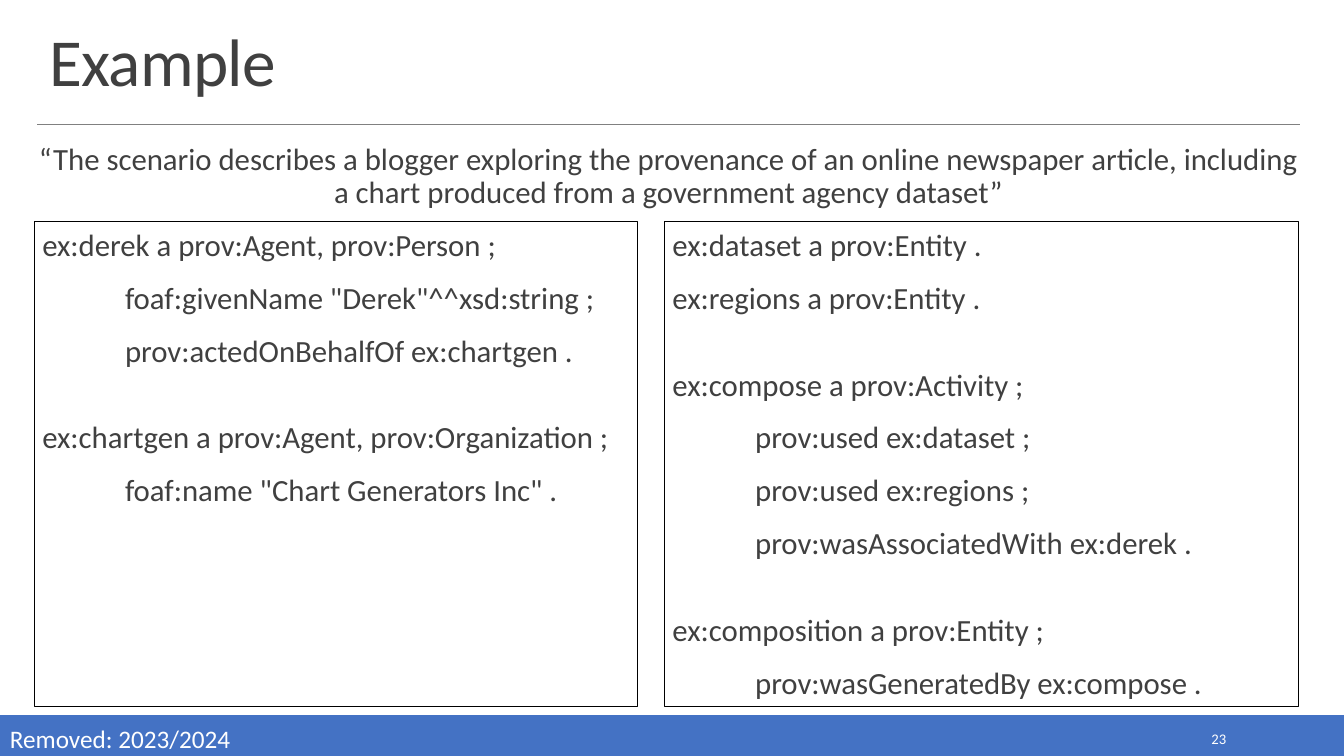
import pptx
import pptx.util
import pptx.dml.color
import pptx.enum.shapes
import pptx.enum.text
import lxml.etree

Pt, Inches = pptx.util.Pt, pptx.util.Inches
ALIGN = pptx.enum.text.PP_ALIGN
ANCHOR = pptx.enum.text.MSO_ANCHOR
RECT = pptx.enum.shapes.MSO_SHAPE.RECTANGLE
NS = "http://schemas.openxmlformats.org/drawingml/2006/main"
COLORS = {"bar": "4472C4", "rule": "808080", "text": "404040",
          "edge": "000000", "light": "FFFFFF"}

# Each panel holds groups; every line after a group's first is indented.
AGENTS = [
    ["ex:derek a prov:Agent, prov:Person ;",
     'foaf:givenName "Derek"^^xsd:string ;',
     "prov:actedOnBehalfOf ex:chartgen ."],
    ["ex:chartgen a prov:Agent, prov:Organization ;",
     'foaf:name "Chart Generators Inc" .'],
]
WORKS = [
    ["ex:dataset a prov:Entity ."],
    ["ex:regions a prov:Entity ."],
    ["ex:compose a prov:Activity ;",
     "prov:used ex:dataset ;",
     "prov:used ex:regions ;",
     "prov:wasAssociatedWith ex:derek ."],
    ["ex:composition a prov:Entity ;",
     "prov:wasGeneratedBy ex:compose ."],
]


class Deck:
    """Style and current slide; lengths are percentages of the slide."""

    font = "Calibri"
    size = 22
    indent = Inches(0.82)

    def __init__(self):
        self.prs = pptx.Presentation()
        self.prs.slide_width = Inches(13.33)
        self.prs.slide_height = Inches(7.5)
        self.slide = self.prs.slides.add_slide(self.prs.slide_layouts[1])
        self.shapes = self.slide.shapes

    def place(self, x, y, w, h):
        wide, high = self.prs.slide_width, self.prs.slide_height
        return (int(wide * x / 100), int(high * y / 100),
                int(wide * w / 100), int(high * h / 100))

    def color(self, name):
        return pptx.dml.color.RGBColor.from_string(COLORS[name])

    def move(self, shape, box):
        shape.left, shape.top, shape.width, shape.height = self.place(*box)

    def frame(self, shape, anchor=ANCHOR.TOP, pads=(0.1, 0.05, 0.1, 0.05)):
        frame = shape.text_frame
        frame.word_wrap = True
        frame.auto_size = pptx.enum.text.MSO_AUTO_SIZE.NONE
        frame.vertical_anchor = anchor
        (frame.margin_left, frame.margin_top,
         frame.margin_right, frame.margin_bottom) = map(Inches, pads)
        return frame

    def style(self, para, text, size, color="text", align=ALIGN.LEFT,
              line=1.0, before=0, after=0, indent=0):
        para.text = text
        para.alignment = align
        para.line_spacing = line
        para.space_before, para.space_after = Pt(before), Pt(after)
        props = para._p.get_or_add_pPr()
        props.set("marL", str(indent))
        props.set("indent", "0")
        lxml.etree.SubElement(props, f"{{{NS}}}buNone")
        para.font.name, para.font.size = self.font, Pt(size)
        para.font.color.rgb = self.color(color)

    def rect(self, box, edge, width, fill=None):
        shape = self.shapes.add_shape(RECT, *self.place(*box))
        shape.shadow.inherit = False
        if fill:
            shape.fill.solid()
            shape.fill.fore_color.rgb = self.color(fill)
        else:
            shape.fill.background()
        shape.line.color.rgb = self.color(edge)
        shape.line.width = Pt(width)
        return shape

    def rule(self, x, y, w):
        left, top, wide, _ = self.place(x, y, w, 0)
        line = self.shapes.add_connector(
            pptx.enum.shapes.MSO_CONNECTOR.STRAIGHT, left, top, left + wide, top)
        line.line.color.rgb = self.color("rule")
        line.line.width = Pt(0.5)
        lxml.etree.SubElement(line._element.spPr, f"{{{NS}}}effectLst")

    def title(self, text, box):
        shape = self.shapes.title
        self.move(shape, box)
        para = self.frame(shape, ANCHOR.BOTTOM).paragraphs[0]
        self.style(para, text, 48, line=0.85)
        para.runs[0]._r.get_or_add_rPr().set("spc", "-50")

    def quote(self, text, box):
        shape = self.slide.placeholders[1]
        self.move(shape, box)
        frame = self.frame(shape, pads=(0, 0.04, 0, 0.04))
        self.style(frame.paragraphs[0], text, self.size,
                   align=ALIGN.CENTER, line=0.9, after=2)

    def label(self, text, box, size, align=ALIGN.LEFT, anchor=ANCHOR.TOP):
        shape = self.shapes.add_textbox(*self.place(*box))
        para = self.frame(shape, anchor).paragraphs[0]
        self.style(para, text, size, "light", align)

    def panel(self, groups, box):
        shape = self.rect(box, "edge", 0.75)
        frame = self.frame(shape, pads=(0.08, 0.08, 0, 0.04))
        para, gap = frame.paragraphs[0], 0
        for group in groups:
            # A wide gap parts a block from the lines above it.
            if gap and len(group) > 1:
                gap = 36.25
            for row, text in enumerate(group):
                para = para or frame.add_paragraph()
                self.style(para, text, self.size, line=0.9, before=gap,
                           after=2, indent=self.indent if row else 0)
                para, gap = None, 12


def main():
    deck = Deck()

    # Footer bar and title rule
    deck.rect((0, 94.67, 100, 5.33), "bar", 1.25, fill="bar")
    deck.rule(2.78, 16.4, 93.92)

    # Heading and scenario
    deck.title("Example", (2.93, 2.67, 93.92, 11.2))
    deck.quote("“The scenario describes a blogger exploring the provenance of "
               "an online newspaper article, including a chart produced from "
               "a government agency dataset”", (2.78, 18.53, 93.92, 10.8))

    # Footer text
    deck.label("23", (81.25, 95.87, 10.73, 3.73), 10.5, ALIGN.RIGHT,
               ANCHOR.MIDDLE)
    deck.label("Removed: 2023/2024", (0, 95.07, 50, 5.33), 18)

    # Code panels
    for groups, x, w in ((AGENTS, 2.55, 44.86), (WORKS, 49.44, 47.19)):
        deck.panel(groups, (x, 29.33, w, 64.13))

    deck.prs.save("out.pptx")


if __name__ == "__main__":
    main()
